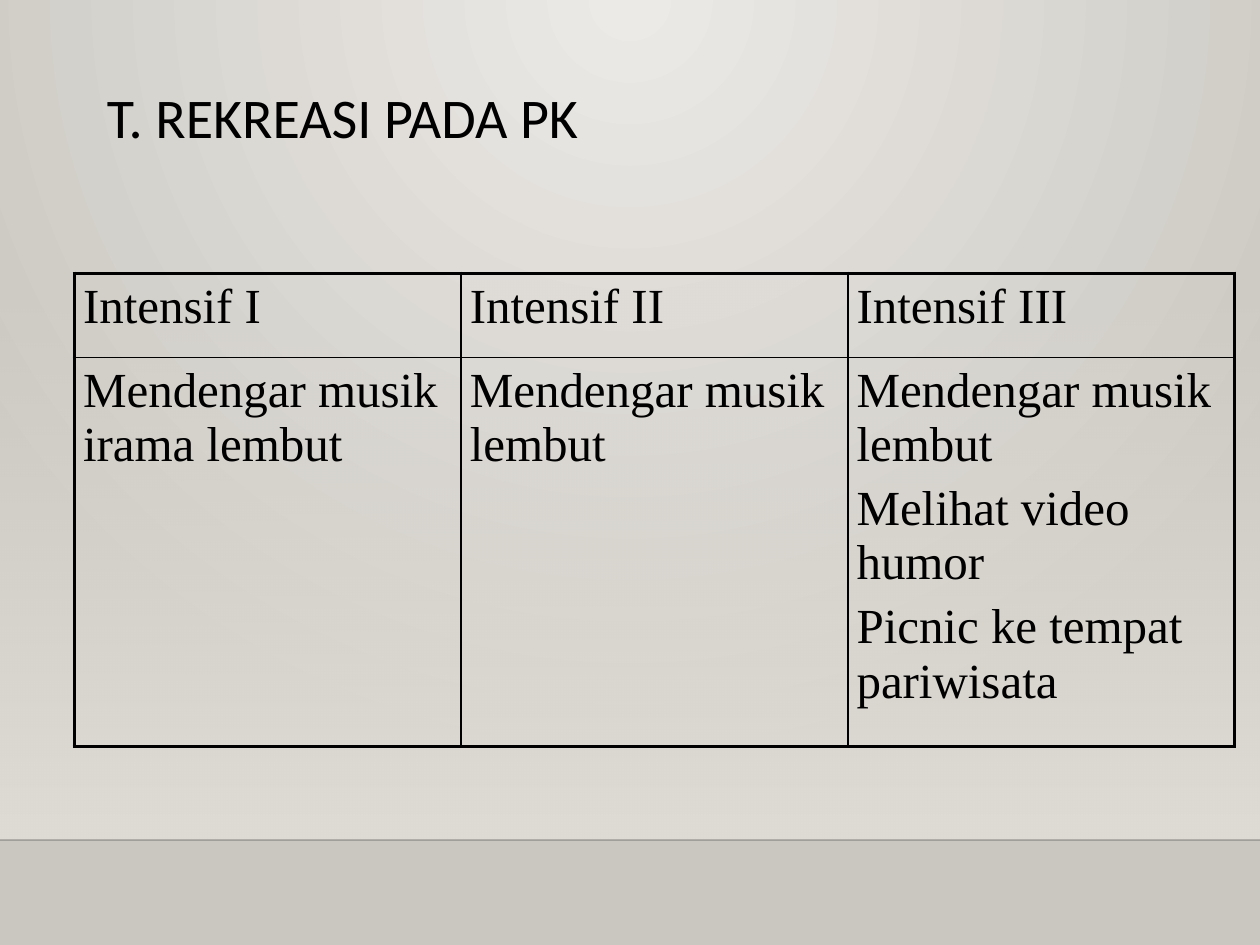
from dataclasses import dataclass

from lxml import etree
from pptx import Presentation
from pptx.dml.color import RGBColor
from pptx.enum.shapes import MSO_CONNECTOR, MSO_SHAPE
from pptx.enum.text import MSO_ANCHOR
from pptx.oxml.ns import qn
from pptx.util import Pt

RECTANGLE = MSO_SHAPE.RECTANGLE
STRAIGHT = MSO_CONNECTOR.STRAIGHT
TOP = MSO_ANCHOR.TOP

PAGE_WIDTH, PAGE_HEIGHT = 720, 540
FLOOR_TOP = 480
BLACK = "000000"
THIN, THICK = 1, 2.25


@dataclass
class Stop:
    position: int
    color: str
    alpha: int = 100


@dataclass
class Column:
    heading: str
    activities: list[str]


COLUMNS = [
    Column("Intensif I", ["Mendengar musik irama lembut"]),
    Column("Intensif II", ["Mendengar musik lembut"]),
    Column("Intensif III", ["Mendengar musik lembut", "Melihat video humor",
                            "Picnic ke tempat pariwisata"]),
]
COLUMN_WIDTH = 221
ROW_HEIGHTS = [48, 222.4]


def rgb(color: str) -> RGBColor:
    return RGBColor.from_string(color)


def child(parent, tag: str, **attributes):
    return etree.SubElement(parent, qn(tag), attributes)


def add_color(parent, color: str, alpha: int = 100) -> None:
    element = child(parent, "a:srgbClr", val=color)
    if alpha < 100:
        child(element, "a:alpha", val=str(alpha * 1000))


def set_gradient(fill, owner, stops: list[Stop]):
    """Give the fill these stops and return its element for a direction."""
    fill.gradient()
    gradient = next(owner.iter(qn("a:gradFill")))
    for old in list(gradient):
        gradient.remove(old)
    stop_list = child(gradient, "a:gsLst")
    for stop in stops:
        element = child(stop_list, "a:gs", pos=str(stop.position * 1000))
        add_color(element, stop.color, stop.alpha)
    return gradient


def write(frame, lines: list[str], font_name: str, size: float,
          space_before: float = 0) -> None:
    frame.word_wrap = True
    for index, line in enumerate(lines):
        para = frame.add_paragraph() if index else frame.paragraphs[0]
        para.text = line
        if index:
            para.space_before = Pt(space_before)
        para.font.name = font_name
        para.font.size = Pt(size)
        para.font.color.rgb = rgb(BLACK)


def set_borders(cell, widths: dict[str, float]) -> None:
    properties = cell._tc.get_or_add_tcPr()
    for index, (side, width) in enumerate(widths.items()):
        border = child(properties, f"a:ln{side}", w=str(Pt(width)))
        add_color(child(border, "a:solidFill"), BLACK)
        properties.insert(index, border)


def add_backdrop(page) -> None:
    # Radial glow from the top centre
    glow = set_gradient(page.background.fill, page._element,
                        [Stop(0, "ECEAE7"), Stop(100, "CAC7C1")])
    circle = child(glow, "a:path", path="circle")
    child(circle, "a:fillToRect", l="43000", t="0", r="43000", b="100000")

    # Wall that fades in towards the floor
    wall = page.shapes.add_shape(RECTANGLE, 0, Pt(158.4), Pt(PAGE_WIDTH),
                                 Pt(FLOOR_TOP - 158.4))
    wall.shadow.inherit = False
    wall.line.fill.background()
    fade = set_gradient(wall.fill, wall._element,
                        [Stop(0, "DFDBD5", 0), Stop(100, "DFDBD5")])
    child(fade, "a:lin", ang="5400000", scaled="0")

    # Floor edge
    edge = page.shapes.add_connector(STRAIGHT, 0, Pt(FLOOR_TOP),
                                     Pt(PAGE_WIDTH), Pt(FLOOR_TOP))
    edge.line.width = Pt(1)
    edge.line.color.rgb = rgb("000001")
    color = next(edge._element.iter(qn("a:srgbClr")))
    child(color, "a:alpha", val="20000")
    child(edge._element.spPr, "a:effectLst")


def add_title(page, text: str) -> None:
    box = page.shapes.add_textbox(Pt(54), Pt(48), Pt(612), Pt(90))
    box.text_frame.vertical_anchor = TOP
    write(box.text_frame, [text], "Calibri", 32)
    box.text_frame.paragraphs[0].line_spacing = 0.9


def add_activity_table(page, columns: list[Column]) -> None:
    last_row, last_column = len(ROW_HEIGHTS) - 1, len(columns) - 1
    table = page.shapes.add_table(
        len(ROW_HEIGHTS), len(columns), Pt(42.5), Pt(156.2),
        Pt(COLUMN_WIDTH * len(columns)), Pt(sum(ROW_HEIGHTS))).table
    table.first_row = table.horz_banding = False
    for row, height in zip(table.rows, ROW_HEIGHTS):
        row.height = Pt(height)
    for x, column in enumerate(columns):
        table.columns[x].width = Pt(COLUMN_WIDTH)
        for y, lines in enumerate([[column.heading], column.activities]):
            cell = table.cell(y, x)
            cell.margin_left = cell.margin_right = Pt(5)
            cell.margin_top = cell.margin_bottom = Pt(3.6)
            cell.fill.background()
            set_borders(cell, {
                "L": THICK if x == 0 else THIN,
                "R": THICK if x == last_column else THIN,
                "T": THICK if y == 0 else THIN,
                "B": THICK if y == last_row else THIN,
            })
            write(cell.text_frame, lines, "Times New Roman", 28, 5.6)


def main() -> None:
    deck = Presentation()
    deck.slide_width, deck.slide_height = Pt(PAGE_WIDTH), Pt(PAGE_HEIGHT)
    page = deck.slides.add_slide(deck.slide_layouts[6])
    add_backdrop(page)
    add_title(page, "T. REKREASI PADA PK")
    add_activity_table(page, COLUMNS)
    deck.save("out.pptx")


if __name__ == "__main__":
    main()
